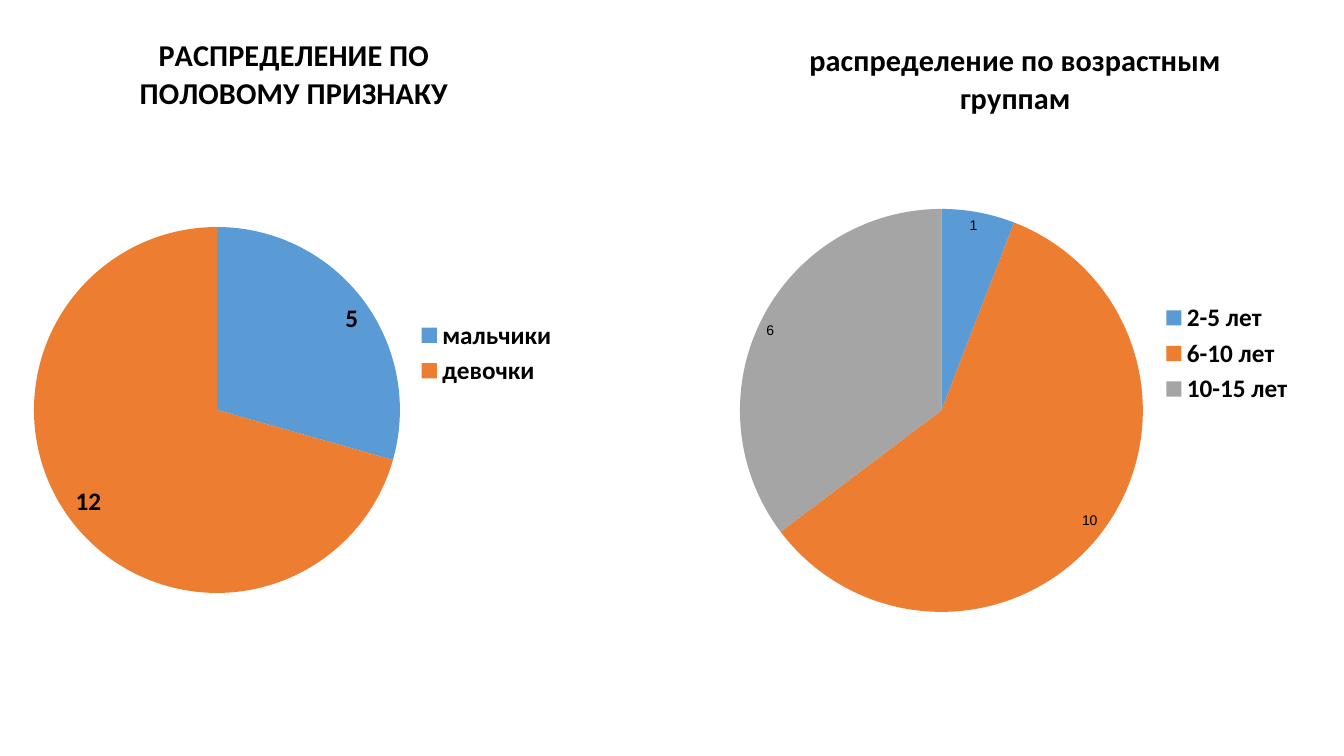
"""Build a slide with two pie charts of children by sex and by age."""
from dataclasses import dataclass

from pptx import Presentation
from pptx.chart.chart import Chart
from pptx.chart.data import CategoryChartData
from pptx.dml.color import RGBColor
from pptx.enum.chart import XL_CHART_TYPE, XL_LABEL_POSITION, XL_LEGEND_POSITION
from pptx.oxml import parse_xml
from pptx.oxml.ns import nsdecls, qn
from pptx.slide import Slide
from pptx.text.text import Font
from pptx.util import Emu, Pt

SCALE = 914400 / 100.8
COLORS = {"text": "000000", "blue": "5B9BD5", "orange": "ED7D31", "gray": "A5A5A5"}
FILLS = ("blue", "orange", "gray")


@dataclass(frozen=True)
class Box:
    left: int
    top: int
    width: int
    height: int


@dataclass(frozen=True)
class Pie:
    title: str
    series: str
    groups: tuple[str, ...]
    counts: tuple[int, ...]
    frame: Box
    disc: Box
    face: str
    size: int
    bold: bool


PIES = (
    Pie("РАСПРЕДЕЛЕНИЕ ПО ПОЛОВОМУ ПРИЗНАКУ", "Series 1",
        ("мальчики", "девочки"), (5, 12),
        Box(20, 9, 548, 688), Box(34, 227, 366, 366), "Calibri", 18, True),
    Pie("распределение по возрастным группам", "распределение по возрастным группам",
        ("2-5 лет", "6-10 лет", "10-15 лет"), (1, 10, 6),
        Box(727, 14, 577, 679), Box(740, 209, 403, 403), "Arial", 10, False),
)


def px(count: int) -> Emu:
    """Turn pixels into EMU."""
    return Emu(round(count * SCALE))


def style(font: Font, size: float, bold: bool, face: str = "Calibri") -> None:
    """Set the face, size, weight and colour of a font."""
    font.name, font.size, font.bold = face, Pt(size), bold
    font.color.rgb = RGBColor.from_string(COLORS["text"])


def place(chart: Chart, frame: Box, disc: Box) -> None:
    """Fix the pie at its place within the chart frame."""
    parts = {
        "x": (disc.left - frame.left) / frame.width,
        "y": (disc.top - frame.top) / frame.height,
        "w": disc.width / frame.width,
        "h": disc.height / frame.height,
    }
    modes = "".join(f'<c:{key}Mode val="edge"/>' for key in "xy")
    sizes = "".join(f'<c:{key} val="{part:.4f}"/>' for key, part in parts.items())
    plot = chart.element.find(f".//{qn('c:plotArea')}")
    for old in plot.findall(qn("c:layout")):
        plot.remove(old)
    plot.insert(0, parse_xml(
        f'<c:layout {nsdecls("c")}><c:manualLayout><c:layoutTarget val="inner"/>'
        f"{modes}{sizes}</c:manualLayout></c:layout>"))


def draw(slide: Slide, pie: Pie) -> None:
    """Add one pie chart with its title, legend and labels."""
    data = CategoryChartData()
    data.categories = pie.groups
    data.add_series(pie.series, pie.counts)
    box = pie.frame
    chart = slide.shapes.add_chart(
        XL_CHART_TYPE.PIE, px(box.left), px(box.top),
        px(box.width), px(box.height), data).chart
    style(chart.font, 18, False)

    chart.has_title = True
    run = chart.chart_title.text_frame.paragraphs[0].add_run()
    run.text = pie.title
    style(run.font, 21.6, True)

    chart.has_legend = True
    chart.legend.position = XL_LEGEND_POSITION.RIGHT
    chart.legend.include_in_layout = False
    style(chart.legend.font, 18, True)

    plot = chart.plots[0]
    plot.vary_by_categories = True
    series = plot.series[0]
    for index, name in enumerate(FILLS[:len(pie.groups)]):
        shape = series.points[index].format
        shape.fill.solid()
        shape.fill.fore_color.rgb = RGBColor.from_string(COLORS[name])
        shape.line.fill.background()
    labels = series.data_labels
    labels.show_value = True
    labels.position = XL_LABEL_POSITION.INSIDE_END
    style(labels.font, pie.size, pie.bold, pie.face)
    place(chart, box, pie.disc)


def main() -> None:
    """Build and save the slide."""
    deck = Presentation()
    deck.slide_width, deck.slide_height = px(1344), px(756)
    slide = deck.slides.add_slide(deck.slide_layouts[6])
    for pie in PIES:
        draw(slide, pie)
    deck.save("out.pptx")


if __name__ == "__main__":
    main()
